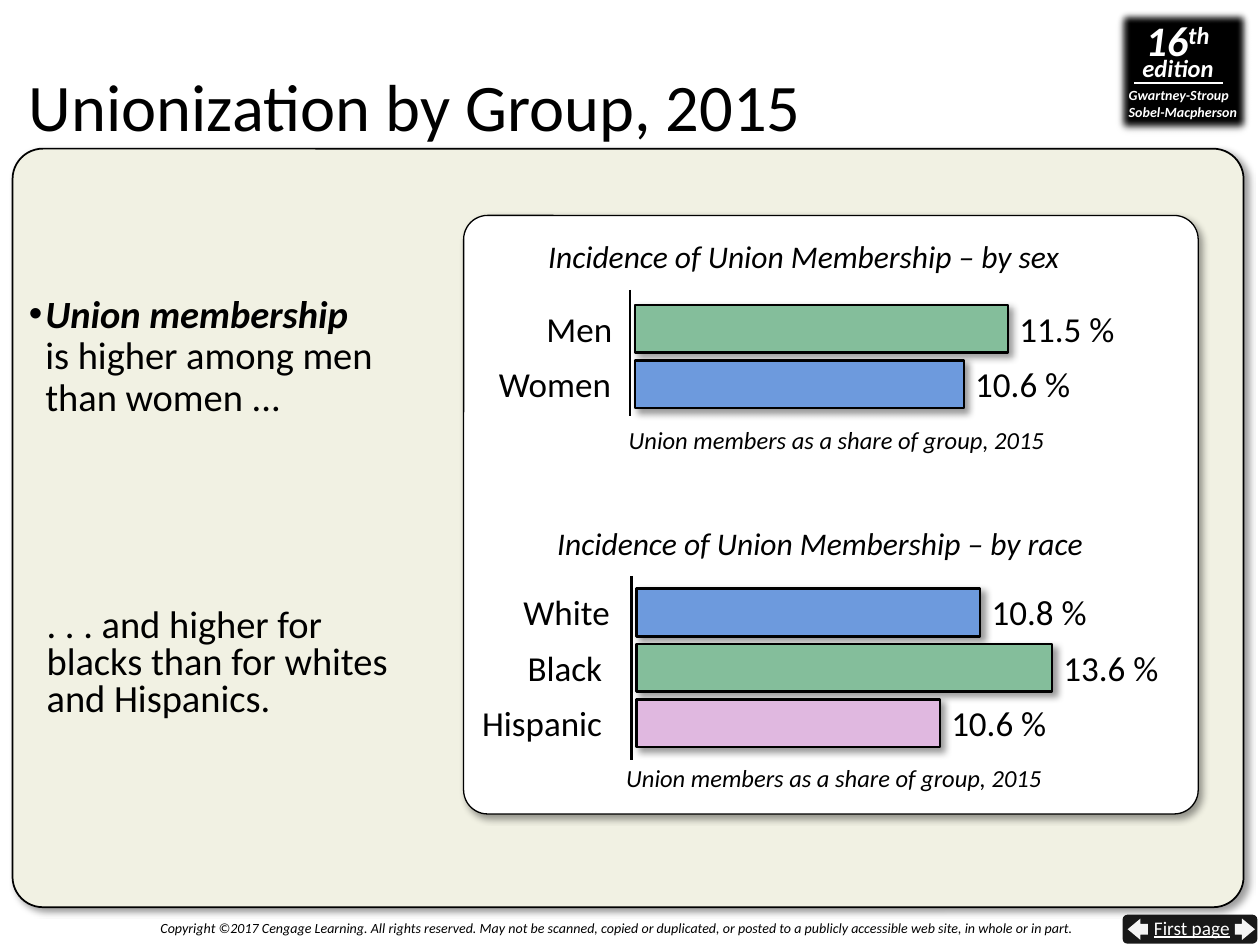
import pptx
import pptx.util
import pptx.dml.color
import pptx.enum.shapes
import pptx.enum.text
import pptx.oxml
import pptx.oxml.ns
import lxml.etree

Inches, Pt = pptx.util.Inches, pptx.util.Pt
SHAPE = pptx.enum.shapes.MSO_SHAPE
ALIGN = pptx.enum.text.PP_ALIGN
ANCHOR = pptx.enum.text.MSO_ANCHOR
qn = pptx.oxml.ns.qn

# Content: runs are (text, format), charts are in inches
TITLE = "Unionization by Group, 2015"
BULLET = [("Union membership", {"bold": True, "italic": True}), ("\v", {}),
          ("is higher among men than women ...", {})]
FOLLOW_UP = [(". . . and higher for blacks than for whites and Hispanics.", {})]
COPYRIGHT = ("Copyright ©2017 Cengage Learning. All rights reserved. May not be scanned, copied or "
             "duplicated, or posted to a publicly accessible web site, in whole or in part.")
GREEN, BLUE, PINK = "84BE9B", "6D9ADD", "E0B8E0"
NOTE = "Union members as a share of group, 2015"
CHARTS = [
    {"title": "Incidence of Union Membership – by sex", "title_center": 6.38, "title_top": 1.94,
     "note_at": (4.99, 3.37), "axis": (5, 2.3, 3.3), "first_bar": 2.42,
     # label, label's right edge, bar length, value, colour
     "bars": [("Men", 4.86, 2.96, "11.5 %", GREEN), ("Women", 4.85, 2.61, "10.6 %", BLUE)]},
    {"title": "Incidence of Union Membership – by race", "title_center": 6.51, "title_top": 4.22,
     "note_at": (4.97, 6.06), "axis": (5.01, 4.57, 6.03), "first_bar": 4.67,
     "bars": [("White", 4.84, 2.73, "10.8 %", BLUE), ("Black", 4.78, 3.3, "13.6 %", GREEN),
              ("Hispanic", 4.78, 2.41, "10.6 %", PINK)]},
]
CHART_TITLE_WIDTH = 5
BAR_HEIGHT, BAR_PITCH, AXIS_GAP, VALUE_GAP = 0.38, 0.44, 0.04, 0.09
SOFT_SHADOW = (40, 4, 3, 45)  # opacity %, blur pt, distance pt, angle

presentation = pptx.Presentation()
presentation.slide_width, presentation.slide_height = Inches(10), Inches(7.5)
slide = presentation.slides.add_slide(presentation.slide_layouts[3])


def color(value):
    return pptx.dml.color.RGBColor.from_string(value)


def add_effects(shape, shadow=None, soft_edge=0):
    """Replace the theme's effects by the given shadow and soft edge."""
    properties = shape._element.spPr
    for old in properties.findall(qn("a:effectLst")):
        properties.remove(old)
    effects = lxml.etree.SubElement(properties, qn("a:effectLst"))
    if shadow:
        opacity, blur, distance, angle = shadow
        outer = lxml.etree.SubElement(effects, qn("a:outerShdw"), blurRad=str(int(Pt(blur))),
                                      dist=str(int(Pt(distance))), dir=str(angle * 60000),
                                      algn="tl", rotWithShape="0")
        black = lxml.etree.SubElement(outer, qn("a:srgbClr"), val="000000")
        lxml.etree.SubElement(black, qn("a:alpha"), val=str(opacity * 1000))
    if soft_edge:
        lxml.etree.SubElement(effects, qn("a:softEdge"), rad=str(int(Pt(soft_edge))))


def add_shape(kind, box, fill, line=0, shadow=None, adjustments=(), opacity=100, soft_edge=0):
    shape = slide.shapes.add_shape(kind, *map(Inches, box))
    for index, value in enumerate(adjustments):
        shape.adjustments[index] = value
    shape.fill.solid()
    shape.fill.fore_color.rgb = color(fill)
    if opacity < 100:
        fill_color = shape._element.spPr.find(qn("a:solidFill"))[0]
        lxml.etree.SubElement(fill_color, qn("a:alpha"), val=str(opacity * 1000))
    if line:
        shape.line.color.rgb = color("000000")
        shape.line.width = Pt(line)
    else:
        shape.line.fill.background()
    add_effects(shape, shadow, soft_edge)
    return shape


def add_line(start, end, line_color, width):
    line = slide.shapes.add_connector(pptx.enum.shapes.MSO_CONNECTOR.STRAIGHT,
                                      *map(Inches, start + end))
    line.line.color.rgb = color(line_color)
    line.line.width = Pt(width)
    add_effects(line)


def add_runs(paragraph, runs, size, text_color="000000", **base):
    for text, extra in runs:
        if text == "\v":
            paragraph.add_line_break()
            continue
        run = paragraph.add_run()
        run.text = text
        run.font.name, run.font.size = "Calibri", Pt(size)
        run.font.color.rgb = color(text_color)
        for name, value in {**base, **extra}.items():
            if name == "baseline":
                run.font._element.set("baseline", str(value * 1000))
            else:
                setattr(run.font, name, value)


def add_text(box, paragraphs, size, text_color="000000", align=ALIGN.LEFT, inset=0.0,
             wrap=False, line_spacing=1.0, **base):
    frame = slide.shapes.add_textbox(*map(Inches, box)).text_frame
    frame.word_wrap = wrap
    frame.margin_left = frame.margin_right = Inches(inset)
    frame.margin_top = frame.margin_bottom = Inches(inset / 2)
    for index, runs in enumerate(paragraphs):
        paragraph = frame.add_paragraph() if index else frame.paragraphs[0]
        paragraph.alignment, paragraph.line_spacing = align, line_spacing
        add_runs(paragraph, runs, size, text_color, **base)


def fill_placeholder(index, box, runs, size, anchor, line_spacing=1.0, bullet=None, indent=0.0):
    shape = slide.placeholders[index]
    shape.left, shape.top, shape.width, shape.height = map(Inches, box)
    slide.shapes._spTree.append(shape._element)  # bring in front of the panels
    frame = shape.text_frame
    frame.auto_size = pptx.enum.text.MSO_AUTO_SIZE.NONE
    frame.word_wrap, frame.vertical_anchor = True, anchor
    paragraph = frame.paragraphs[0]
    properties = paragraph._p.get_or_add_pPr()
    properties.set("marL", str(int(Inches(indent))))
    properties.set("indent", str(-int(Inches(indent))))
    if bullet:
        lxml.etree.SubElement(properties, qn("a:buChar"), char=bullet)
    else:
        lxml.etree.SubElement(properties, qn("a:buNone"))
    paragraph.alignment, paragraph.line_spacing = ALIGN.LEFT, line_spacing
    paragraph.space_before = Pt(0)
    add_runs(paragraph, runs, size)


def add_bar_chart(chart):
    axis_x, axis_top, axis_bottom = chart["axis"]
    title_left = chart["title_center"] - CHART_TITLE_WIDTH / 2
    add_text((title_left, chart["title_top"], CHART_TITLE_WIDTH, 0.24), [[(chart["title"], {})]],
             18, align=ALIGN.CENTER, line_spacing=0.8, italic=True)
    add_text((*chart["note_at"], 3.6, 0.24), [[(NOTE, {})]], 14, italic=True)
    add_line((axis_x, axis_top), (axis_x, axis_bottom), "000000", 1.5)
    bar_left = axis_x + AXIS_GAP
    for row, (label, label_right, length, value, fill) in enumerate(chart["bars"]):
        top = chart["first_bar"] + row * BAR_PITCH
        add_shape(SHAPE.RECTANGLE, (bar_left, top, length, BAR_HEIGHT), fill, 1.5, SOFT_SHADOW)
        add_text((label_right - 1, top + 0.02, 1, 0.34), [[(label, {})]], 20, align=ALIGN.RIGHT)
        add_text((bar_left + length + VALUE_GAP, top + 0.02, 0.9, 0.34), [[(value, {})]], 20)


# Footer: copyright line and navigation button
add_shape(SHAPE.ROUNDED_RECTANGLE, (8.91, 7.26, 1.07, 0.23), "000000", opacity=90)
add_text((1.13, 7.25, 7.5, 0.24), [[(COPYRIGHT, {})]], 8, align=ALIGN.RIGHT, inset=0.1,
         wrap=True, italic=True)
add_text((9.06, 7.22, 0.91, 0.29), [[("First page", {})]], 11, "FFFFFF", inset=0.1,
         underline=True)
for arrow, left in ((SHAPE.LEFT_ARROW, 8.95), (SHAPE.RIGHT_ARROW, 9.8)):
    add_shape(arrow, (left, 7.29, 0.16, 0.17), "FFFFFF", adjustments=(0.5, 0.64), opacity=96)

# Content panel
add_shape(SHAPE.ROUNDED_RECTANGLE, (0.1, 1.18, 9.77, 6.02), "F1F1E3", 1, SOFT_SHADOW, (0.04,))

# Edition badge
add_shape(SHAPE.RECTANGLE, (8.84, 0.06, 1.1, 1.01), "000000", 0.75, (35, 3.1, 1.8, 90),
          soft_edge=5)
badge = {"text_color": "FFFFFF", "inset": 0.1, "bold": True, "italic": True}
add_text((8.94, 0.07, 0.81, 0.5), [[("16", {}), ("th", {"baseline": 30})]], 24,
         align=ALIGN.CENTER, **badge)
add_text((8.96, 0.37, 0.78, 0.34), [[("edition", {})]], 14, align=ALIGN.CENTER, **badge)
add_line((9, 0.66), (9.71, 0.66), "FFFFFF", 1)
add_text((8.86, 0.64, 1.14, 0.37), [[("Gwartney-Stroup", {})], [("Sobel-Macpherson", {})]], 8,
         **badge)

# Chart panel, title and commentary
add_shape(SHAPE.ROUNDED_RECTANGLE, (3.68, 1.71, 5.83, 4.75), "FFFFFF", 0.75, SOFT_SHADOW, (0.04,))
fill_placeholder(0, (0.13, 0.45, 9.74, 0.75), [(TITLE, {})], 38, ANCHOR.BOTTOM)
fill_placeholder(1, (0.13, 2.29, 3.19, 1.1), BULLET, 22, ANCHOR.TOP, 0.9, "•", 0.13)
fill_placeholder(2, (0.27, 4.78, 3.02, 0.99), FOLLOW_UP, 22, ANCHOR.TOP, 0.8)

# Bar charts
for chart in CHARTS:
    add_bar_chart(chart)

presentation.save("out.pptx")
